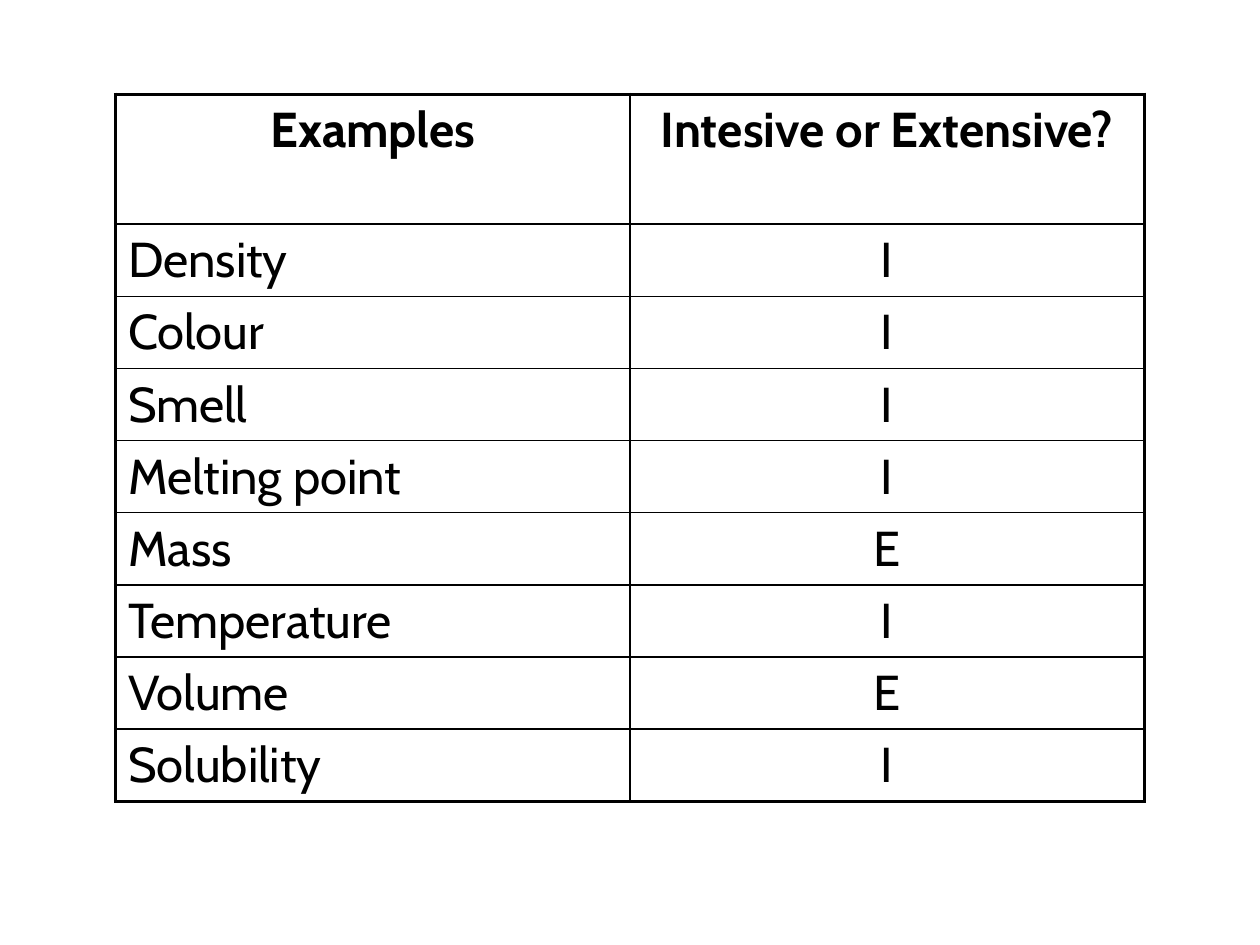
from dataclasses import dataclass

from pptx import Presentation
from pptx.dml.color import RGBColor as Color
from pptx.enum.text import PP_ALIGN as Align
from pptx.oxml.xmlchemy import OxmlElement as Element
from pptx.util import Cm, Pt


@dataclass(frozen=True)
class Theme:
    font: str = "Cabin"
    ink: str = "000000"
    text_size: float = 28
    inner_line: float = 1
    outer_line: float = 2.25


HEADINGS = ("Examples", "Intesive or Extensive?")
PROPERTIES = (
    ("Density", "I"),
    ("Colour", "I"),
    ("Smell", "I"),
    ("Melting point", "I"),
    ("Mass", "E"),
    ("Temperature", "I"),
    ("Volume", "E"),
    ("Solubility", "I"),
)


class SlideBuilder:
    def __init__(self, slide, theme):
        self.slide = slide
        self.theme = theme

    def add_run(self, paragraph, text, bold):
        run = paragraph.add_run()
        run.text = text
        run.font.name = self.theme.font
        run.font.size = Pt(self.theme.text_size)
        run.font.bold = bold
        run.font.color.rgb = Color.from_string(self.theme.ink)

    def add_borders(self, cell, outer_sides):
        properties = cell._tc.get_or_add_tcPr()
        for side in "LRTB":
            width = self.theme.outer_line if side in outer_sides else self.theme.inner_line
            line = Element(f"a:ln{side}")
            line.set("w", str(Pt(width)))
            fill = Element("a:solidFill")
            color = Element("a:srgbClr")
            color.set("val", self.theme.ink)
            fill.append(color)
            line.append(fill)
            properties.append(line)

    def add_table(self, rows, left, top, column_width, header_height, row_height):
        row_count, column_count = len(rows), len(rows[0])
        table = self.slide.shapes.add_table(
            row_count, column_count, left, top,
            column_width * column_count,
            header_height + row_height * (row_count - 1),
        ).table
        table.first_row = False
        table.horz_banding = False
        for column in table.columns:
            column.width = column_width
        for row_index, texts in enumerate(rows):
            is_header = row_index == 0
            table.rows[row_index].height = header_height if is_header else row_height
            for column_index, text in enumerate(texts):
                cell = table.cell(row_index, column_index)
                paragraph = cell.text_frame.paragraphs[0]
                centred = is_header or column_index > 0
                paragraph.alignment = Align.CENTER if centred else Align.LEFT
                self.add_run(paragraph, text, is_header)
                edges = {
                    "L": column_index == 0,
                    "R": column_index == column_count - 1,
                    "T": is_header,
                    "B": row_index == row_count - 1,
                }
                self.add_borders(cell, [side for side, outer in edges.items() if outer])
                cell.fill.background()


def main():
    presentation = Presentation()
    presentation.slide_width = Cm(25.4)
    presentation.slide_height = Cm(19.05)
    slide = presentation.slides.add_slide(presentation.slide_layouts[6])
    builder = SlideBuilder(slide, Theme())
    builder.add_table(
        (HEADINGS, *PROPERTIES),
        left=Cm(2.33), top=Cm(1.9), column_width=Cm(10.37),
        header_height=Cm(2.62), row_height=Cm(1.44),
    )
    presentation.save("out.pptx")


if __name__ == "__main__":
    main()
